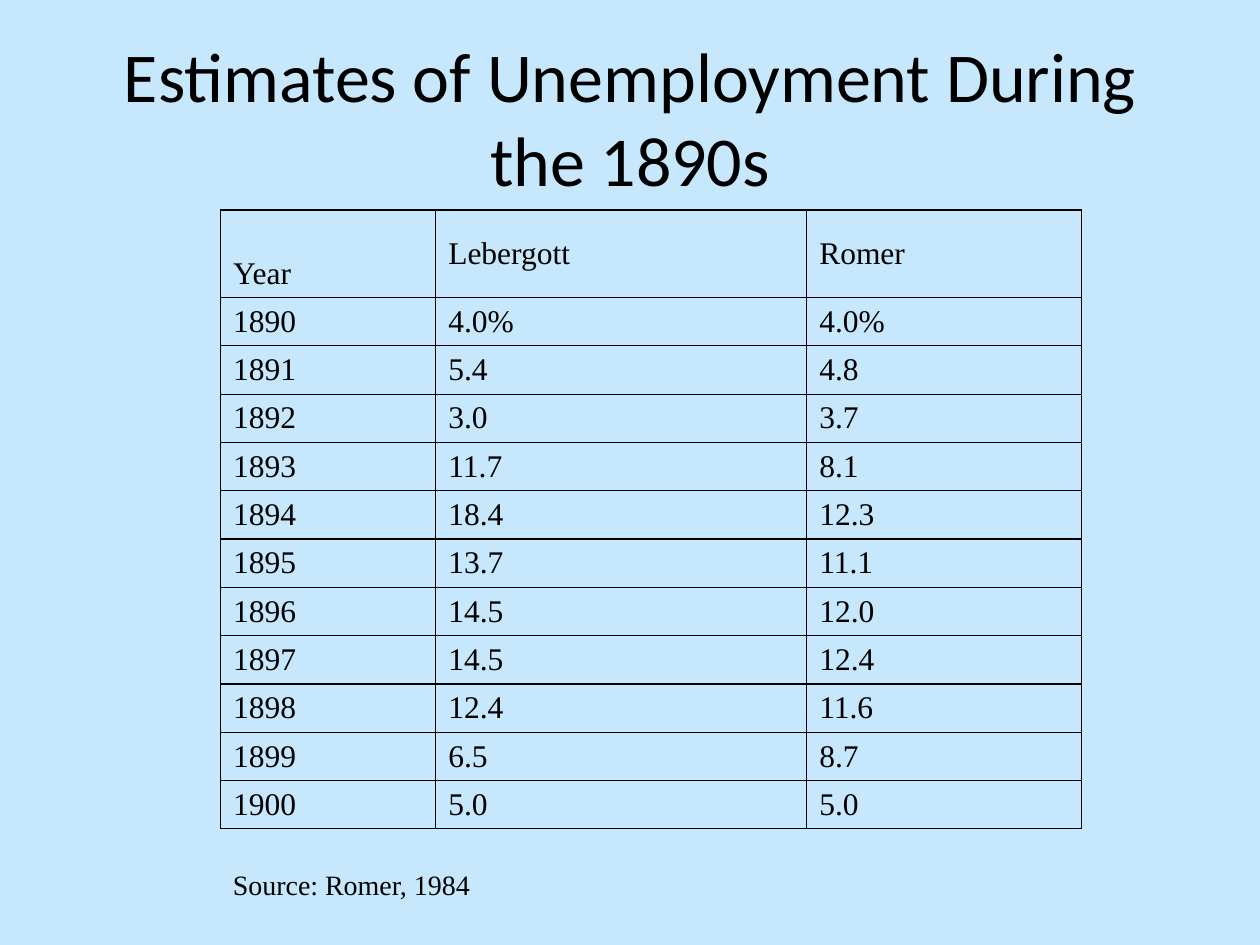
import pptx
import pptx.dml.color
import pptx.enum.text
import pptx.oxml
import pptx.oxml.ns
import pptx.util

Pt = pptx.util.Pt
RGBColor = pptx.dml.color.RGBColor
Anchor = pptx.enum.text.MSO_ANCHOR
Align = pptx.enum.text.PP_ALIGN

SKY = RGBColor(0xC6, 0xE7, 0xFC)
BLACK = RGBColor(0, 0, 0)

HEADINGS = ("Year", "Lebergott", "Romer")
ESTIMATES = (
    ("1890", "4.0%", "4.0%"),
    ("1891", "5.4", "4.8"),
    ("1892", "3.0", "3.7"),
    ("1893", "11.7", "8.1"),
    ("1894", "18.4", "12.3"),
    ("1895", "13.7", "11.1"),
    ("1896", "14.5", "12.0"),
    ("1897", "14.5", "12.4"),
    ("1898", "12.4", "11.6"),
    ("1899", "6.5", "8.7"),
    ("1900", "5.0", "5.0"),
)


class SlideWriter:
    title_font = "Calibri"
    body_font = "Times New Roman"

    def __init__(self, deck):
        self.page = deck.slides.add_slide(deck.slide_layouts[5])
        self.page.background.fill.solid()
        self.page.background.fill.fore_color.rgb = SKY

    def add_span(self, para, text, size, font):
        span = para.add_run()
        span.text = text
        span.font.size = Pt(size)
        span.font.name = font
        span.font.color.rgb = BLACK

    def title(self, text, left, top, width, height):
        box = self.page.shapes.title
        box.left, box.top, box.width, box.height = map(Pt, (left, top, width, height))
        box.text_frame.vertical_anchor = Anchor.MIDDLE
        para = box.text_frame.paragraphs[0]
        para.alignment = Align.CENTER
        self.add_span(para, text, 40, self.title_font)

    def note(self, text, left, top, width, height):
        box = self.page.shapes.add_textbox(*map(Pt, (left, top, width, height)))
        frame = box.text_frame
        frame.word_wrap = False
        frame.auto_size = pptx.enum.text.MSO_AUTO_SIZE.SHAPE_TO_FIT_TEXT
        frame.vertical_anchor = Anchor.MIDDLE
        self.add_span(frame.paragraphs[0], text, 16, self.body_font)

    def table(self, rows, left, top, widths, heights):
        frame = self.page.shapes.add_table(
            len(rows), len(widths), Pt(left), Pt(top), Pt(sum(widths)), Pt(sum(heights)))
        table = frame.table
        table.first_row = False
        table.horz_banding = False
        for column, width in zip(table.columns, widths):
            column.width = Pt(width)
        for row, height, texts in zip(table.rows, heights, rows):
            row.height = Pt(height)
            for cell, text in zip(row.cells, texts):
                self.add_borders(cell)
                cell.fill.background()
                cell.vertical_anchor = Anchor.MIDDLE
                self.add_span(cell.text_frame.paragraphs[0], text, 18, self.body_font)
        return table

    def add_borders(self, cell):
        properties = cell._tc.get_or_add_tcPr()
        for side in ("lnL", "lnR", "lnT", "lnB"):
            properties.append(pptx.oxml.parse_xml(
                f'<a:{side} {pptx.oxml.ns.nsdecls("a")} w="{Pt(0.75)}">'
                f'<a:solidFill><a:srgbClr val="{BLACK}"/></a:solidFill></a:{side}>'))


def main():
    deck = pptx.Presentation()
    deck.slide_width, deck.slide_height = Pt(720), Pt(540)
    writer = SlideWriter(deck)

    # Title
    writer.title("Estimates of Unemployment During the 1890s", 36, 21.6, 648, 90)

    # Unemployment table, with a taller heading row
    heights = [50] + [27.63] * len(ESTIMATES)
    table = writer.table((HEADINGS, *ESTIMATES), 126, 120, (123, 212, 157), heights)
    table.cell(0, 0).vertical_anchor = Anchor.BOTTOM

    # Source line
    writer.note("Source: Romer, 1984", 126, 492, 151, 26.6)

    deck.save("out.pptx")


if __name__ == "__main__":
    main()
